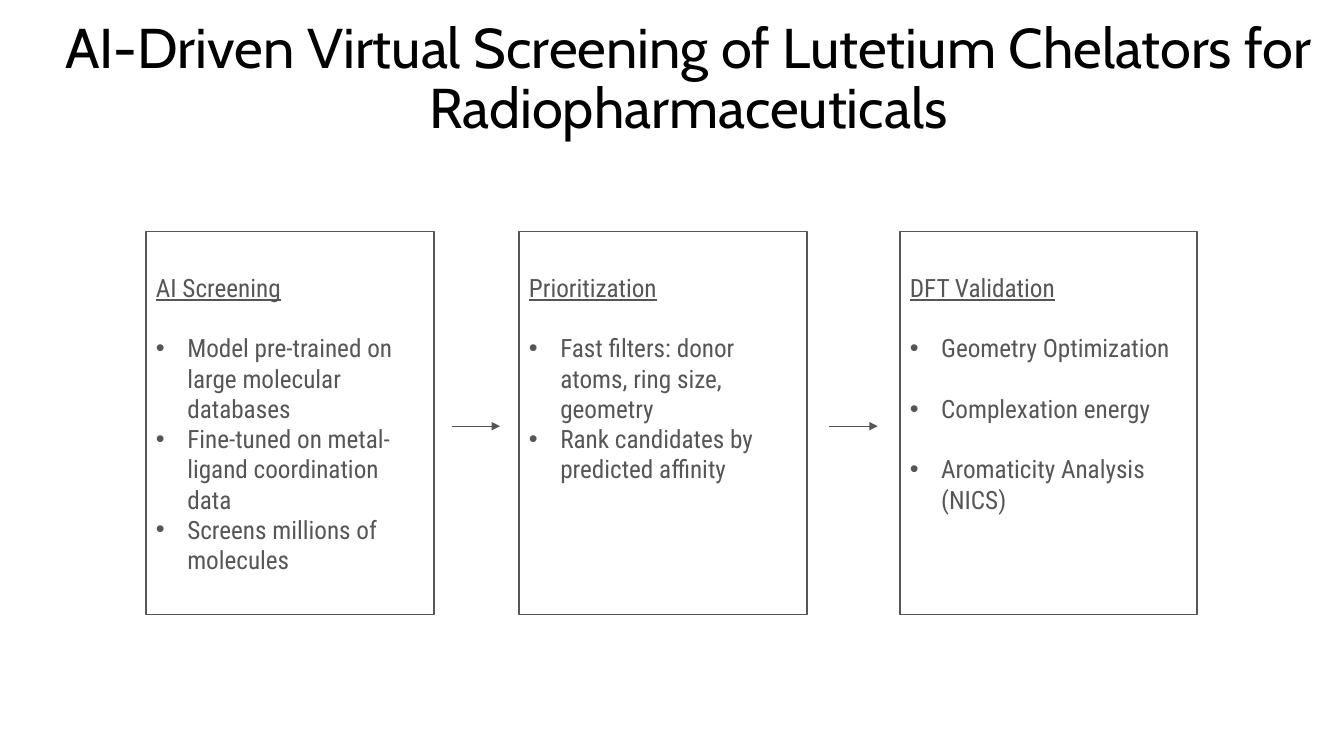
"""Build a slide showing three screening steps joined by arrows."""
from lxml import etree
from pptx import Presentation
from pptx.dml.color import RGBColor
from pptx.enum import shapes, text
from pptx.oxml import ns
from pptx.util import Cm, Pt

COLOURS = {"title": "000000", "ink": "565656", "paper": "FFFFFF"}
LINE_GAP = Pt(21.6)
STEP_TOP, STEP_HEIGHT = 5.84, 9.65
ARROW_Y, ARROW_LENGTH = 10.74, 1.22

STEPS = [
    (3.68, 7.26, "AI Screening", 0, [
        "Model pre-trained on large molecular databases",
        "Fine-tuned on metal-ligand coordination data",
        "Screens millions of molecules"]),
    (13.08, 7.26, "Prioritization", 0, [
        "Fast filters: donor atoms, ring size, geometry",
        "Rank candidates by predicted affinity"]),
    (22.68, 7.49, "DFT Validation", LINE_GAP, [
        "Geometry Optimization",
        "Complexation energy",
        "Aromaticity Analysis (NICS)"]),
]


def colour(name):
    return RGBColor.from_string(COLOURS[name])


def style(para, font_name, size, ink):
    para.font.name = font_name
    para.font.size = Pt(size)
    para.font.color.rgb = colour(ink)


deck = Presentation()
deck.slide_width, deck.slide_height = Cm(33.87), Cm(19.05)
page = deck.slides.add_slide(deck.slide_layouts[5])

title = page.shapes.title
title.left, title.top, title.width, title.height = Cm(1.14), Cm(0.18), Cm(32.41), Cm(3.68)
title.text_frame.text = "AI-Driven Virtual Screening of Lutetium Chelators for Radiopharmaceuticals"
title.text_frame.vertical_anchor = text.MSO_ANCHOR.MIDDLE
title.text_frame.auto_size = text.MSO_AUTO_SIZE.NONE
heading = title.text_frame.paragraphs[0]
heading.alignment = text.PP_ALIGN.CENTER
heading.line_spacing = 0.9
style(heading, "Cabin", 40, "title")

for left, width, name, gap, points in STEPS:
    box = page.shapes.add_shape(
        shapes.MSO_SHAPE.RECTANGLE, Cm(left), Cm(STEP_TOP), Cm(width), Cm(STEP_HEIGHT))
    box.shadow.inherit = False
    box.fill.solid()
    box.fill.fore_color.rgb = colour("paper")
    box.line.color.rgb = colour("ink")
    box.line.width = Pt(1)
    frame = box.text_frame
    frame.word_wrap = True
    frame.vertical_anchor = text.MSO_ANCHOR.TOP
    frame.margin_top = Cm(1.02)
    frame.text = name
    para = frame.paragraphs[0]
    para.alignment = text.PP_ALIGN.LEFT
    style(para, "Roboto Condensed", 18, "ink")
    para.font.underline = True
    for number, point in enumerate(points):
        para = frame.add_paragraph()
        para.text = point
        para.alignment = text.PP_ALIGN.LEFT
        para.space_before = gap if number else LINE_GAP
        props = para._p.get_or_add_pPr()
        props.set("marL", str(Cm(0.79)))
        props.set("indent", str(-Cm(0.79)))
        etree.SubElement(props, ns.qn("a:buFont"), typeface="Arial")
        etree.SubElement(props, ns.qn("a:buChar"), char="•")
        style(para, "Roboto Condensed", 18, "ink")

for start in (11.38, 20.9):
    arrow = page.shapes.add_connector(
        shapes.MSO_CONNECTOR.STRAIGHT,
        Cm(start), Cm(ARROW_Y), Cm(start + ARROW_LENGTH), Cm(ARROW_Y))
    arrow.line.color.rgb = colour("ink")
    arrow.line.width = Pt(0.5)
    etree.SubElement(arrow.line._get_or_add_ln(), ns.qn("a:tailEnd"), type="triangle")
    etree.SubElement(arrow._element.spPr, ns.qn("a:effectLst"))

deck.save("out.pptx")
